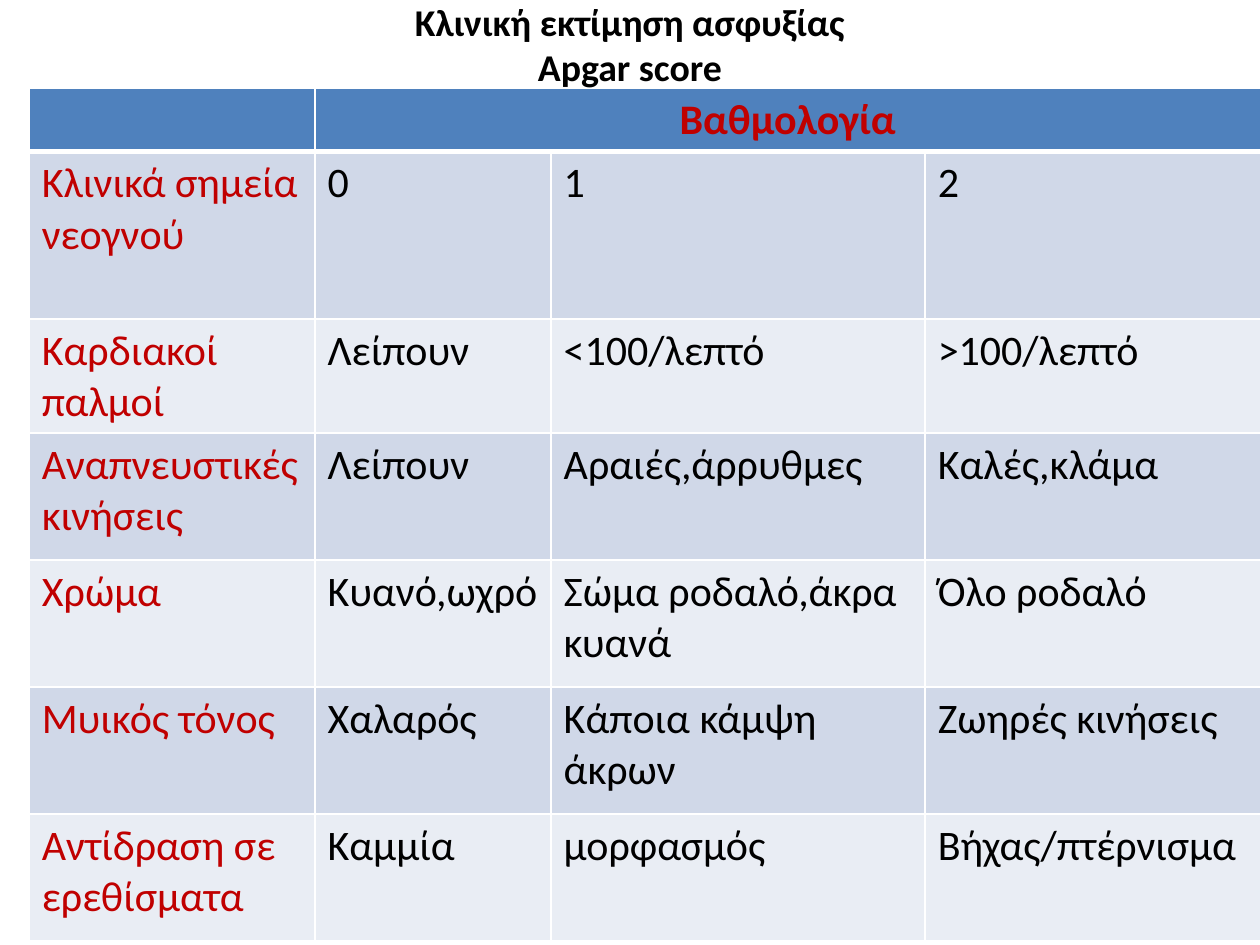
from dataclasses import dataclass

from lxml.etree import SubElement
from pptx import Presentation
from pptx.dml.color import RGBColor
from pptx.enum.text import MSO_ANCHOR, PP_ALIGN
from pptx.oxml.ns import qn
from pptx.util import Cm, Pt

COLORS = {
    "header": "4F81BD",
    "dark_band": "D0D8E8",
    "light_band": "E9EDF4",
    "label": "C00000",
    "text": "000000",
    "border": "FFFFFF",
}
FONT = "Calibri"
COLUMN_WIDTHS = (5.76, 4.76, 7.54, 6.76)
ROW_HEIGHTS = (1.28, 3.37, 2.3) + (2.56,) * 4


@dataclass
class Sign:
    name: str
    scores: tuple[str, str, str]


SIGNS = [
    Sign("Κλινικά σημεία νεογνού", ("0", "1", "2")),
    Sign("Καρδιακοί παλμοί", ("Λείπουν", "<100/λεπτό", ">100/λεπτό")),
    Sign("Αναπνευστικές κινήσεις", ("Λείπουν", "Αραιές,άρρυθμες", "Καλές,κλάμα")),
    Sign("Χρώμα", ("Κυανό,ωχρό", "Σώμα ροδαλό,άκρα κυανά", "Όλο ροδαλό")),
    Sign("Μυικός τόνος", ("Χαλαρός", "Κάποια κάμψη άκρων", "Ζωηρές κινήσεις")),
    Sign("Αντίδραση σε ερεθίσματα", ("Καμμία", "μορφασμός", "Βήχας/πτέρνισμα")),
]


def write(text_frame, text: str, *, size: float = 24, color: str = "text",
          bold: bool = False, align=PP_ALIGN.LEFT) -> None:
    paragraph = text_frame.paragraphs[0]
    paragraph.text = text
    paragraph.alignment = align
    for run in paragraph.runs:
        run.font.name = FONT
        run.font.size = Pt(size)
        run.font.bold = bold
        run.font.color.rgb = RGBColor.from_string(COLORS[color])


def style_cell(cell, fill: str, bottom_width: float = 1,
               top_width: float = 1) -> None:
    # Borders come before the fill in the cell properties
    properties = cell._tc.get_or_add_tcPr()
    widths = {"lnL": 1, "lnR": 1, "lnT": top_width, "lnB": bottom_width}
    for side, width in widths.items():
        line = SubElement(properties, qn(f"a:{side}"), w=str(Pt(width)))
        solid = SubElement(line, qn("a:solidFill"))
        SubElement(solid, qn("a:srgbClr"), val=COLORS["border"])
    cell.fill.solid()
    cell.fill.fore_color.rgb = RGBColor.from_string(COLORS[fill])


def add_title(slide) -> None:
    box = slide.shapes.add_textbox(0, 0, Cm(25.4), Cm(1.78))
    box.text_frame.word_wrap = True
    box.text_frame.vertical_anchor = MSO_ANCHOR.MIDDLE
    write(box.text_frame, "Κλινική εκτίμηση ασφυξίας\vΑpgar score",
          size=21.6, bold=True, align=PP_ALIGN.CENTER)


def add_score_table(slide, signs: list[Sign]) -> None:
    table = slide.shapes.add_table(
        len(ROW_HEIGHTS), len(COLUMN_WIDTHS), Cm(0.59), Cm(1.78),
        Cm(sum(COLUMN_WIDTHS)), Cm(sum(ROW_HEIGHTS))).table
    for column, width in zip(table.columns, COLUMN_WIDTHS):
        column.width = Cm(width)
    for row, height in zip(table.rows, ROW_HEIGHTS):
        row.height = Cm(height)

    # Header row
    for cell in table.rows[0].cells:
        style_cell(cell, "header", bottom_width=3)
    heading = table.cell(0, 1)
    heading.merge(table.cell(0, 3))
    write(heading.text_frame, "Βαθμολογία", color="label", bold=True,
          align=PP_ALIGN.CENTER)

    # One banded row for each sign
    for row_index, sign in enumerate(signs, start=1):
        band = "dark_band" if row_index % 2 else "light_band"
        for column_index, text in enumerate((sign.name, *sign.scores)):
            cell = table.cell(row_index, column_index)
            style_cell(cell, band, top_width=3 if row_index == 1 else 1)
            write(cell.text_frame, text,
                  color="text" if column_index else "label")


def main() -> None:
    presentation = Presentation()
    presentation.slide_width = Cm(25.4)
    presentation.slide_height = Cm(19.05)
    slide = presentation.slides.add_slide(presentation.slide_layouts[6])
    add_title(slide)
    add_score_table(slide, SIGNS)
    presentation.save("out.pptx")


if __name__ == "__main__":
    main()
